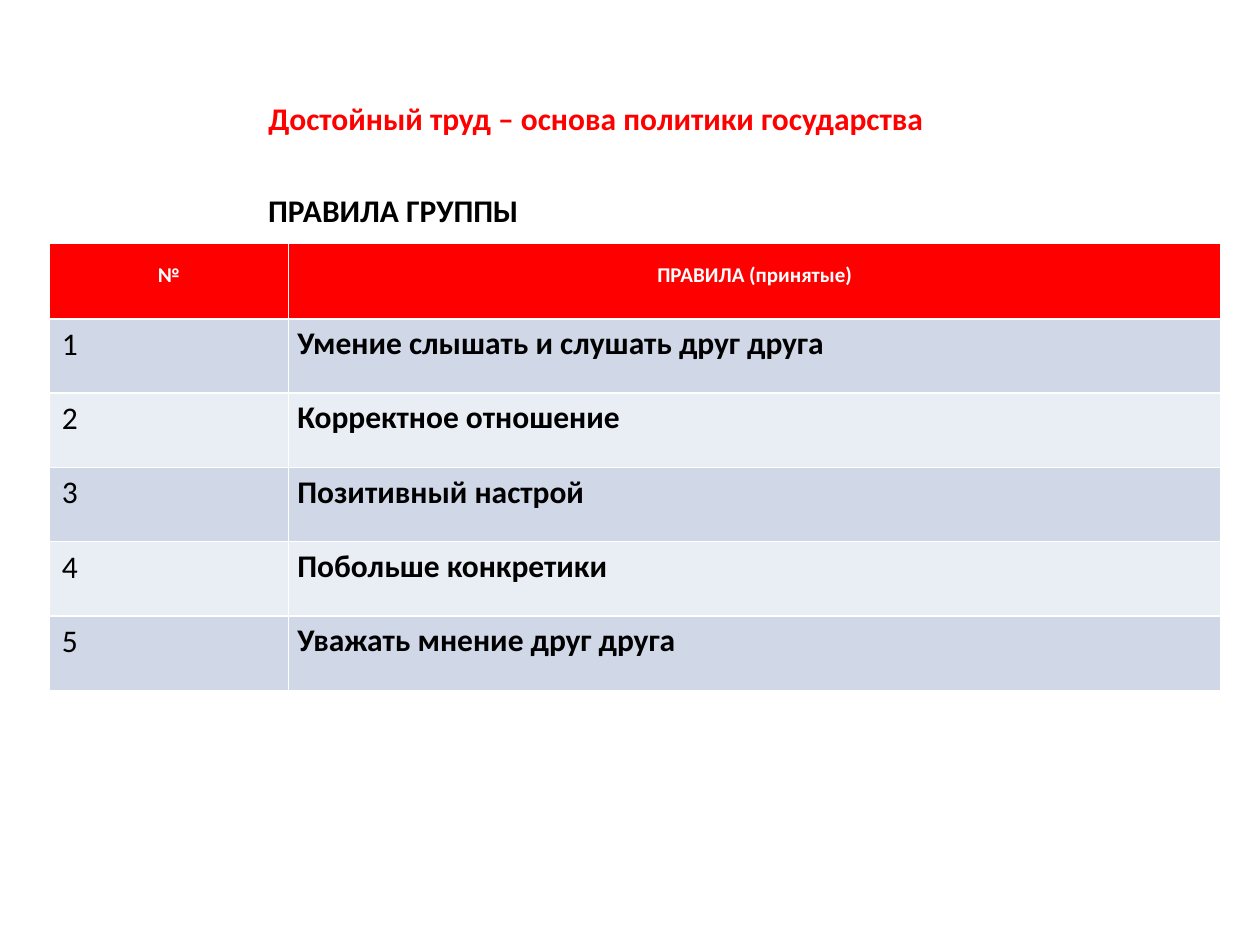
from pptx import Presentation
from pptx.dml.color import RGBColor
from pptx.enum.text import MSO_ANCHOR, MSO_AUTO_SIZE, PP_ALIGN
from pptx.util import Inches, Pt

LEFT, CENTER = PP_ALIGN.LEFT, PP_ALIGN.CENTER
MIDDLE = MSO_ANCHOR.MIDDLE
NO_FIT, GROW = MSO_AUTO_SIZE.NONE, MSO_AUTO_SIZE.SHAPE_TO_FIT_TEXT

RED = RGBColor(0xFF, 0x00, 0x00)
BLACK = RGBColor(0x00, 0x00, 0x00)
WHITE = RGBColor(0xFF, 0xFF, 0xFF)
BAND_FILLS = (RGBColor(0xD0, 0xD8, 0xE8), RGBColor(0xE9, 0xED, 0xF4))

TITLE = "Достойный труд – основа политики государства"
SUBTITLE = "ПРАВИЛА ГРУППЫ"
HEADERS = ("№", "ПРАВИЛА (принятые)")
RULES = (
    "Умение слышать и слушать друг друга",
    "Корректное отношение",
    "Позитивный настрой",
    "Побольше конкретики",
    "Уважать мнение друг друга",
)
COLUMN_WIDTHS = (1.9, 7.4)
HEADER_HEIGHT, RULE_HEIGHT = 0.6, 0.59

HEADER_FORMAT = {"size": 12, "color": WHITE, "align": CENTER, "spacing": 1.5}
NUMBER_FORMAT = {"bold": False}
RULE_FORMAT = {"spacing": 1.15}
RULE_MARGINS = {
    "margin_left": Inches(0.07),
    "margin_right": Inches(0.07),
    "margin_top": 0,
    "margin_bottom": 0,
}


def set_attributes(target, values):
    """Set each named value on the target."""
    for name, value in values.items():
        setattr(target, name, value)


def write_text(frame, text, size=18, color=BLACK, bold=True, align=LEFT, spacing=1.0):
    """Write one formatted paragraph into a text frame."""
    para = frame.paragraphs[0]
    set_attributes(para, {"alignment": align, "line_spacing": spacing})
    span = para.add_run()
    span.text = text
    set_attributes(span.font, {"name": "Calibri", "size": Pt(size), "bold": bold})
    span.font.color.rgb = color


def add_title(page):
    """Place the red title in the title placeholder."""
    title = page.shapes.title
    set_attributes(title, {
        "left": Inches(2.03),
        "top": Inches(0.74),
        "width": Inches(7.15),
        "height": Inches(0.39),
    })
    set_attributes(title.text_frame, {"auto_size": NO_FIT, "vertical_anchor": MIDDLE})
    write_text(title.text_frame, TITLE, color=RED)


def add_subtitle(page):
    """Add the heading above the table."""
    box = page.shapes.add_textbox(Inches(2.03), Inches(1.47), Inches(2.21), Inches(0.4))
    set_attributes(box.text_frame, {"auto_size": GROW, "word_wrap": False})
    write_text(box.text_frame, SUBTITLE)


def fill_cell(cell, text, fill, text_format):
    """Colour a cell and write its text."""
    cell.fill.solid()
    cell.fill.fore_color.rgb = fill
    write_text(cell.text_frame, text, **text_format)


def add_rules_table(page):
    """Add the table of numbered group rules."""
    row_heights = [HEADER_HEIGHT] + [RULE_HEIGHT] * len(RULES)
    table = page.shapes.add_table(
        len(row_heights), len(COLUMN_WIDTHS), Inches(0.39), Inches(1.93),
        Inches(sum(COLUMN_WIDTHS)), Inches(sum(row_heights)),
    ).table
    for column, width in zip(table.columns, COLUMN_WIDTHS):
        column.width = Inches(width)
    for row, height in zip(table.rows, row_heights):
        row.height = Inches(height)
    for index, header in enumerate(HEADERS):
        fill_cell(table.cell(0, index), header, RED, HEADER_FORMAT)
    for number, rule in enumerate(RULES, start=1):
        fill = BAND_FILLS[(number - 1) % len(BAND_FILLS)]
        fill_cell(table.cell(number, 0), str(number), fill, NUMBER_FORMAT)
        rule_cell = table.cell(number, 1)
        fill_cell(rule_cell, rule, fill, RULE_FORMAT)
        set_attributes(rule_cell, RULE_MARGINS)


def main():
    """Build the group rules slide and save it."""
    deck = Presentation()
    set_attributes(deck, {"slide_width": Inches(10), "slide_height": Inches(7.5)})
    page = deck.slides.add_slide(deck.slide_layouts.get_by_name("Title Only"))
    add_title(page)
    add_subtitle(page)
    add_rules_table(page)
    deck.save("out.pptx")


if __name__ == "__main__":
    main()
